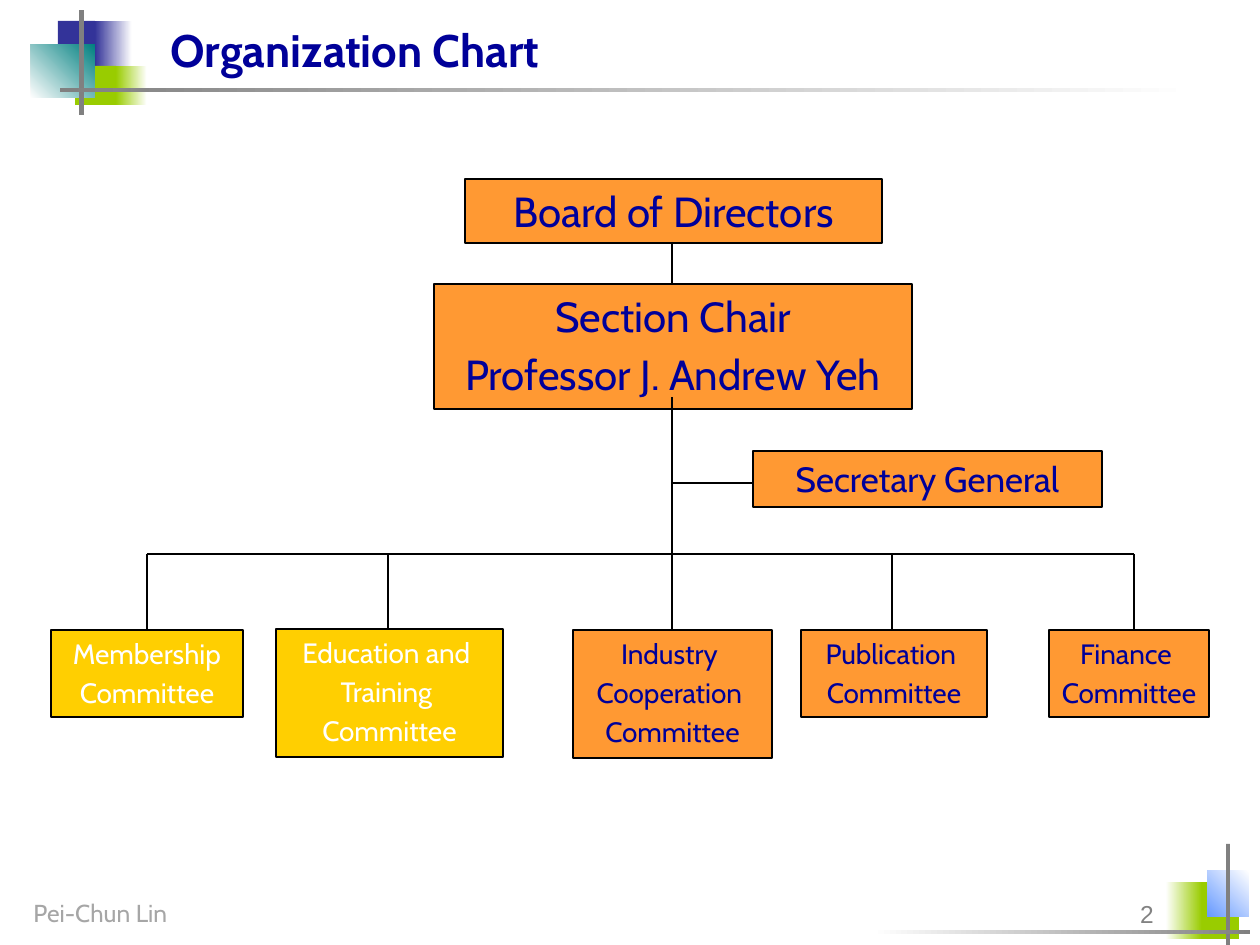
from lxml.etree import SubElement
from pptx import Presentation
from pptx.dml.color import RGBColor as RGB
from pptx.enum.shapes import MSO_CONNECTOR as Conn, MSO_SHAPE as Shape
from pptx.enum.text import MSO_ANCHOR as Anchor, MSO_AUTO_SIZE as Auto, PP_ALIGN as Align
from pptx.oxml.ns import qn
from pptx.util import Inches, Pt

NAVY = RGB(0x00, 0x00, 0x99)
INDIGO = RGB(0x33, 0x33, 0x99)
LIME = RGB(0x99, 0xCC, 0x00)
TEAL = RGB(0x00, 0x80, 0x80)
SKY = RGB(0x66, 0x99, 0xFF)
GREY = RGB(0x80, 0x80, 0x80)
PALE = RGB(0xA6, 0xA6, 0xA6)
DIM = RGB(0x82, 0x82, 0x82)
ORANGE = RGB(0xFF, 0x99, 0x33)
YELLOW = RGB(0xFF, 0xCF, 0x01)
WHITE = RGB(0xFF, 0xFF, 0xFF)
BLACK = RGB(0x00, 0x00, 0x00)

# Corner ornaments: left, top, width, height, colours from start to end, angle
DECOR = [
    (58, 21, 37, 55, [INDIGO], 0),
    (95, 21, 37, 55, [INDIGO, WHITE], 0),
    (75, 66, 41, 39, [LIME], 0),
    (116, 66, 31, 39, [LIME, WHITE], 0),
    (31, 44, 64, 54, [WHITE, TEAL], 45),
    (79, 10, 5, 105, [GREY], 0),
    (60, 88, 1134, 4, [GREY, WHITE], 0),
    (1197, 882, 42, 57, [LIME], 0),
    (1166, 882, 36, 57, [WHITE, LIME], 0),
    (1207, 871, 42, 46, [SKY, WHITE], 45),
    (1226, 844, 4, 101, [GREY], 0),
    (872, 930, 378, 4, [WHITE, GREY], 0),
]

# Plain text: left, top, width, height, text, font, size, colour, bold, align, anchor
LABELS = [
    (21, 892, 221, 43, "Pei-Chun Lin", "Cabin", 14, PALE, False, Align.LEFT, Anchor.TOP),
    (158, 9, 1061, 74, "Organization Chart", "Cabin", 26, NAVY, True, Align.LEFT, Anchor.BOTTOM),
    (1061, 872, 105, 63, "2", "Arial", 14, DIM, False, Align.RIGHT, Anchor.BOTTOM),
]

# Boxes: left, top, width, height, lines, size, fill, text colour, wrap
BACK = [
    (434, 284, 478, 125, ["Section Chair", "Professor J. Andrew Yeh"], 24, ORANGE, NAVY, False),
    (465, 179, 417, 64, ["Board of Directors"], 24, ORANGE, NAVY, True),
    (276, 629, 227, 128, ["Education and ", "Training ", "Committee"], 16, YELLOW, WHITE, True),
]
FRONT = [
    (1049, 630, 160, 87, ["Finance ", "Committee"], 16, ORANGE, NAVY, False),
    (801, 630, 186, 87, ["Publication ", "Committee"], 16, ORANGE, NAVY, True),
    (573, 630, 199, 128, ["Industry ", "Cooperation ", "Committee"], 16, ORANGE, NAVY, True),
    (51, 630, 192, 87, ["Membership", "Committee"], 16, YELLOW, WHITE, True),
    (753, 451, 349, 56, ["Secretary General"], 20, ORANGE, NAVY, True),
]

# Tree: trunk, bus and the drops (x, end y)
TRUNK, BUS = 672, 554
DROPS = [(147, 670), (388, 629), (892, 649), (1134, 670)]
LINES = [
    (TRUNK, 397, TRUNK, 639),
    (DROPS[0][0], BUS, DROPS[-1][0], BUS),
    (TRUNK, 483, 756, 483),
    *[(x, BUS, x, end) for x, end in DROPS],
    (TRUNK, 242, TRUNK, 284),
]

SCALE = Inches(1) / 126


def px(*vals):
    return [round(v * SCALE) for v in vals]


def rect(*area):
    box = slide.shapes.add_shape(Shape.RECTANGLE, *px(*area))
    box.shadow.inherit = False
    return box


def write(frame, lines, font, size, color, bold, align):
    for i, line in enumerate(lines):
        par = frame.paragraphs[0] if i == 0 else frame.add_paragraph()
        par.alignment = align
        par.space_before = Pt(round(size * 0.2, 1) if i else 0)
        run = par.add_run()
        run.text = line
        run.font.name = font
        run.font.size = Pt(size)
        run.font.bold = bold
        run.font.color.rgb = color


def add_box(x, y, w, h, lines, size, fill, color, wrap):
    box = rect(x, y, w, h)
    box.fill.solid()
    box.fill.fore_color.rgb = fill
    box.line.color.rgb = BLACK
    box.line.width = Pt(0.75)
    frame = box.text_frame
    frame.word_wrap = wrap
    frame.auto_size = Auto.SHAPE_TO_FIT_TEXT
    frame.vertical_anchor = Anchor.TOP
    write(frame, lines, "Cabin", size, color, False, Align.CENTER)


prs = Presentation()
prs.slide_width, prs.slide_height = Inches(10), Inches(7.5)
slide = prs.slides.add_slide(prs.slide_layouts[6])

# Ornaments
for *area, colors, angle in DECOR:
    part = rect(*area)
    part.line.fill.background()
    if len(colors) == 1:
        part.fill.solid()
        part.fill.fore_color.rgb = colors[0]
    else:
        part.fill.gradient()
        part.fill.gradient_angle = angle
        for stop, color in zip(part.fill.gradient_stops, colors):
            stop.color.rgb = color

# Footer, title and page number
for *area, text, font, size, color, bold, align, anchor in LABELS:
    frame = slide.shapes.add_textbox(*px(*area)).text_frame
    frame.word_wrap = True
    frame.vertical_anchor = anchor
    write(frame, [text], font, size, color, bold, align)

# Boxes behind the lines
for item in BACK:
    add_box(*item)

# Lines
for ends in LINES:
    line = slide.shapes.add_connector(Conn.STRAIGHT, *px(*ends))
    line.line.color.rgb = BLACK
    line.line.width = Pt(0.75)
    SubElement(line._element.spPr, qn("a:effectLst"))

# Boxes in front of the lines
for item in FRONT:
    add_box(*item)

prs.save("out.pptx")
